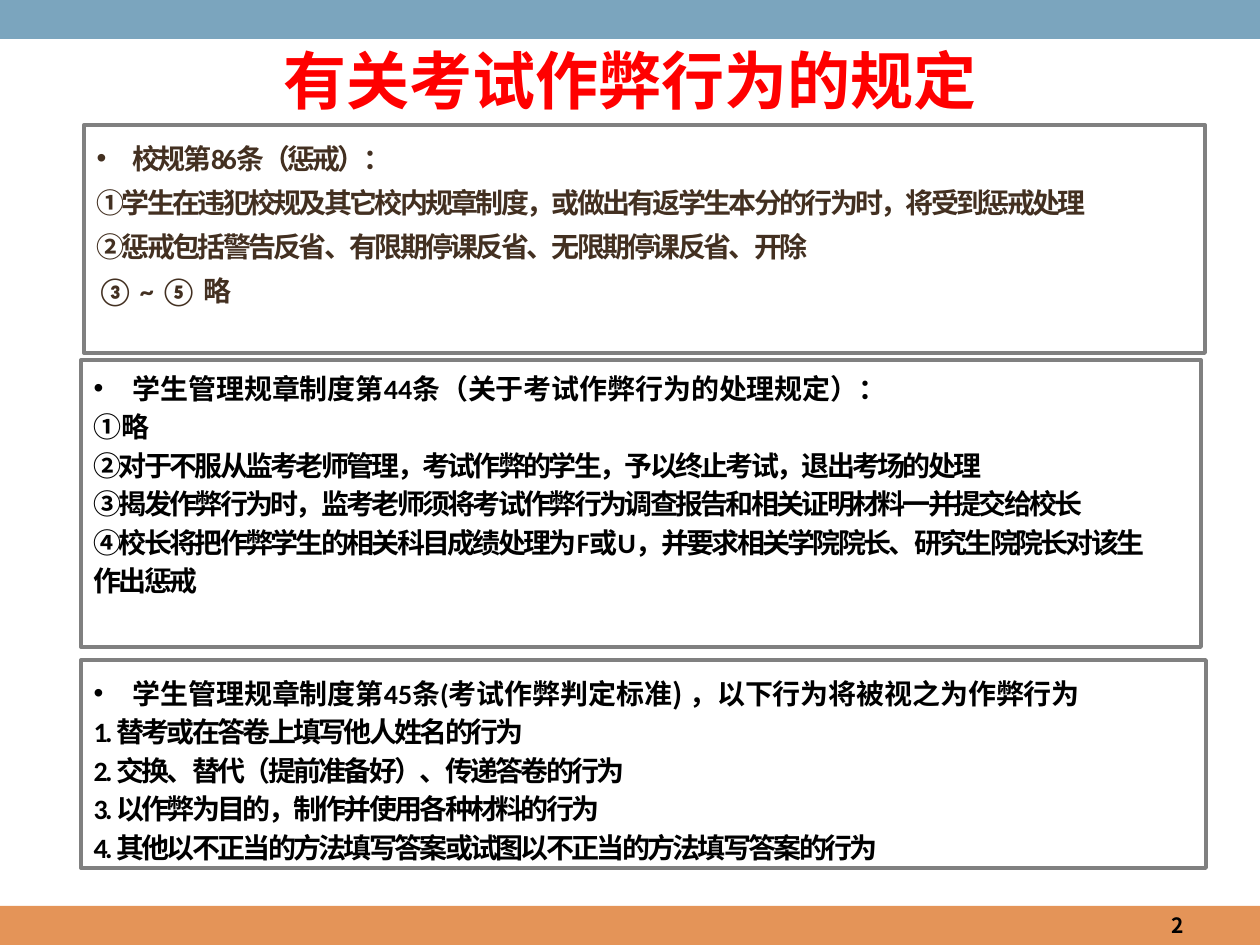
from lxml import etree
from pptx import Presentation
from pptx import util as u
from pptx.dml.color import RGBColor
from pptx.enum import shapes, text
from pptx.oxml.ns import qn

PX = 914400 / 126
BLUE = RGBColor(0x7B, 0xA5, 0xBE)
ORANGE = RGBColor(0xE4, 0x94, 0x58)
GRAY = RGBColor(0x80, 0x80, 0x80)
RED = RGBColor(0xFF, 0x00, 0x00)
BROWN = RGBColor(0x43, 0x30, 0x21)
BLACK = RGBColor(0x00, 0x00, 0x00)
CJK = "Noto Sans CJK KR"
TIGHT = -150
COMPARISON_LAYOUT = 4

# Each rule is a list of (text runs, letter spacing); the first is its heading.
SCHOOL_RULE = [
    (["校规第86条（惩戒）："], TIGHT),
    (["①学生在违犯校规及其它校内规章制度，或做出有返学生本分的行为时，将受到惩戒处理"], TIGHT),
    (["②惩戒包括警告反省、有限期停课反省、无限期停课反省、开除"], TIGHT),
    (["③ ~ ⑤ 略"], 0),
]
CHEATING_RULE = [
    (["学生管理规章制度第44条（关于考试作弊行为的处理规定）："], 0),
    (["①略"], 0),
    (["②对于不服从监考老师管理，考试作弊的学生，予以终止考试，退出考场的处理"], TIGHT),
    (["③揭发作弊行为时，监考老师须将考试作弊行为调查报告和相关证明材料一并提交给校长"], TIGHT),
    (["④校长将把作弊学生的相关科目成绩处理为F或U，并要求相关学院院长、研究生院院长对该生作出惩戒"], TIGHT),
]
CRITERIA_RULE = [
    (["学生管理规章制度第45条(", "考试作弊判定标准) ", "，以下行为将被视之为作弊行为"], 0),
    (["1. 替考或在答卷上填写他人姓名的行为"], TIGHT),
    (["2. 交换、替代（提前准备好）、传递答卷的行为"], TIGHT),
    (["3. 以作弊为目的，制作并使用各种材料的行为"], TIGHT),
    (["4. 其他以不正当的方法填写答案或试图以不正当的方法填写答案的行为"], TIGHT),
]


def px(n):
    return u.Emu(round(n * PX))


def place(sp, box):
    for name, value in zip(("left", "top", "width", "height"), box):
        setattr(sp, name, px(value))


def add_rect(s, box, fill=None, line=None):
    sp = s.shapes.add_shape(shapes.MSO_SHAPE.RECTANGLE, *map(px, box))
    sp.shadow.inherit = False
    if fill is None:
        sp.fill.background()
    else:
        sp.fill.solid()
        sp.fill.fore_color.rgb = fill
    if line is None:
        sp.line.fill.background()
    else:
        sp.line.color.rgb = line
        sp.line.width = u.Pt(2.25)


def set_frame(tf, anchor=text.MSO_ANCHOR.TOP):
    values = {"word_wrap": True, "auto_size": text.MSO_AUTO_SIZE.NONE,
              "vertical_anchor": anchor,
              "margin_left": u.Inches(0.1), "margin_right": u.Inches(0.1),
              "margin_top": u.Inches(0.05), "margin_bottom": u.Inches(0.05)}
    for name, value in values.items():
        setattr(tf, name, value)


def add_run(p, words, color, size=16, font="Calibri", spacing=0):
    r = p.add_run()
    r.text = words
    values = {"size": u.Pt(size), "bold": True, "name": font}
    for name, value in values.items():
        setattr(r.font, name, value)
    r.font.color.rgb = color
    rPr = r.font._element
    rPr.set("spc", str(spacing))
    etree.SubElement(rPr, qn("a:ea"), typeface=CJK)


def set_bullet(p, indent):
    """Give the paragraph a hanging dot, or no bullet when indent is 0."""
    pPr = p._p.get_or_add_pPr()
    pPr.set("marL", str(px(indent)))
    pPr.set("indent", str(-px(indent)))
    if indent:
        etree.SubElement(pPr, qn("a:buFont"), typeface="Arial")
        etree.SubElement(pPr, qn("a:buChar"), char="•")
    else:
        etree.SubElement(pPr, qn("a:buNone"))


def fill_rule(sp, box, rule, color, indent, gap=0):
    place(sp, box)
    tf = sp.text_frame
    set_frame(tf)
    for i, (runs, spacing) in enumerate(rule):
        p = tf.add_paragraph() if i else tf.paragraphs[0]
        set_bullet(p, 0 if i else indent)
        values = {"alignment": text.PP_ALIGN.LEFT,
                  "line_spacing": u.Pt(22 if i else 25),
                  "space_before": u.Pt(gap if i else 0)}
        for name, value in values.items():
            setattr(p, name, value)
        for k, words in enumerate(runs):
            add_run(p, words, color, font=CJK if k == 1 else "Calibri",
                    spacing=spacing)


def fill_line(sp, words, align, anchor, **style):
    set_frame(sp.text_frame, anchor)
    p = sp.text_frame.paragraphs[0]
    p.alignment = align
    add_run(p, words, **style)


def main():
    prs = Presentation()
    prs.slide_width, prs.slide_height = px(1260), px(945)
    s = prs.slides.add_slide(prs.slide_layouts[COMPARISON_LAYOUT])
    holders = {sp.placeholder_format.idx: sp for sp in s.placeholders}

    add_rect(s, (0, 906, 1260, 39), fill=ORANGE)
    add_rect(s, (0, 0, 1260, 39), fill=BLUE)
    for box in ((84, 125, 1121, 228), (81, 360, 1120, 287), (81, 660, 1125, 208)):
        add_rect(s, box, line=GRAY)

    title = holders[0]
    place(title, (0, 35, 1260, 89))
    fill_line(title, "有关考试作弊行为的规定", text.PP_ALIGN.CENTER,
              text.MSO_ANCHOR.TOP, color=RED, size=36, font="Cambria")

    fill_rule(holders[1], (84, 125, 1121, 194), SCHOOL_RULE, BROWN, 36, gap=3.2)
    fill_rule(holders[2], (81, 355, 1097, 251), CHEATING_RULE, BLACK, 39)
    fill_rule(holders[3], (81, 660, 1113, 213), CRITERIA_RULE, BLACK, 39)
    unused = holders[4]._element
    unused.getparent().remove(unused)

    number = s.shapes.add_textbox(*map(px, (903, 906, 293, 39)))
    fill_line(number, "2", text.PP_ALIGN.RIGHT, text.MSO_ANCHOR.MIDDLE,
              color=BLACK, size=12, font=CJK)
    prs.save("out.pptx")


if __name__ == "__main__":
    main()
